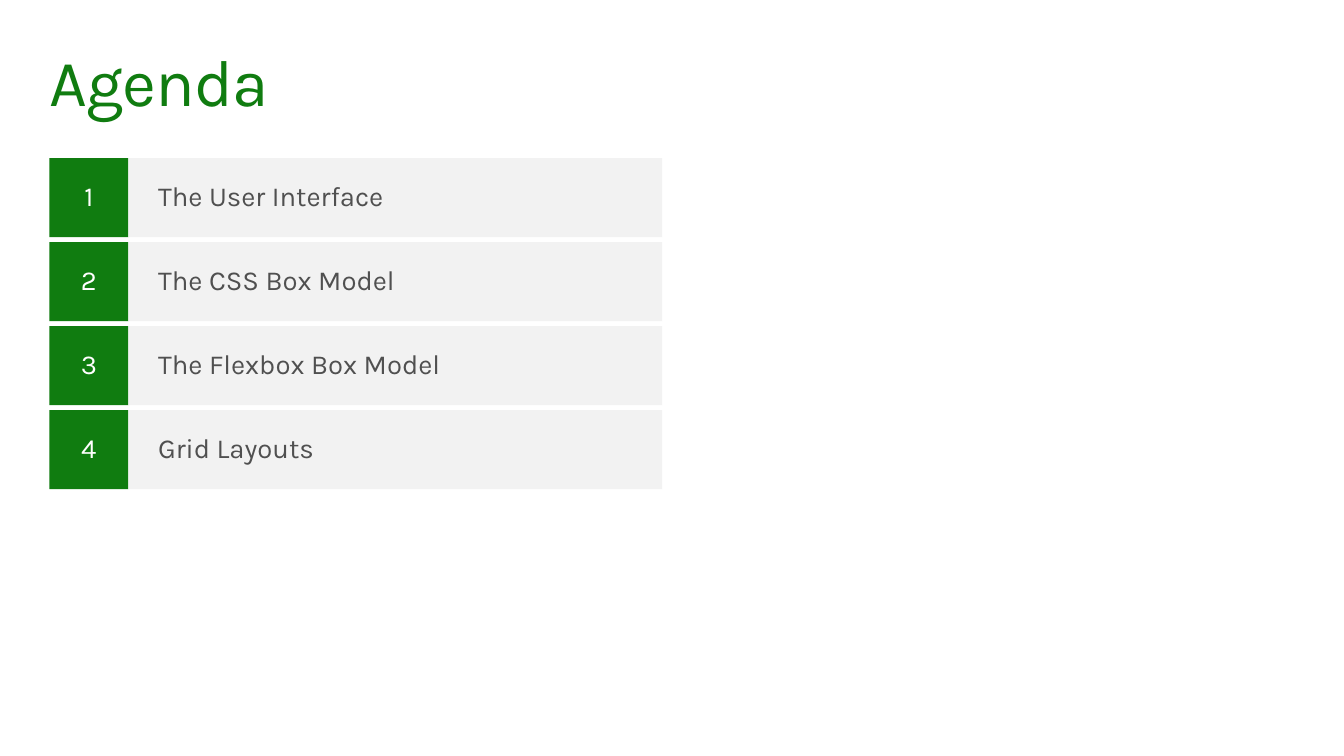
import pptx
import pptx.dml.color
import pptx.enum.shapes
import pptx.enum.text
import pptx.util
from pptx.util import Inches

GREEN = "107C10"
PALE_GREY = "F2F2F2"
DARK_GREY = "505050"
WHITE = "FFFFFF"

ALIGN = pptx.enum.text.PP_ALIGN
ANCHOR = pptx.enum.text.MSO_ANCHOR


def write_text(frame, text, size, color, align, anchor, margin_x, margin_y):
    """Fill a text frame with one formatted line and return its run."""
    frame.word_wrap = True
    frame.auto_size = pptx.enum.text.MSO_AUTO_SIZE.NONE
    frame.vertical_anchor = anchor
    frame.margin_left = frame.margin_right = Inches(margin_x)
    frame.margin_top = frame.margin_bottom = Inches(margin_y)
    paragraph = frame.paragraphs[0]
    paragraph.alignment = align
    paragraph.line_spacing = 0.9
    run = paragraph.add_run()
    run.text = text
    run.font.name = "Karla"
    run.font.size = pptx.util.Pt(size)
    run.font.color.rgb = pptx.dml.color.RGBColor.from_string(color)
    return run


def add_block(shapes, left, top, width, height, color):
    block = shapes.add_shape(
        pptx.enum.shapes.MSO_SHAPE.RECTANGLE,
        Inches(left), Inches(top), Inches(width), Inches(height),
    )
    block.shadow.inherit = False
    block.fill.solid()
    block.fill.fore_color.rgb = pptx.dml.color.RGBColor.from_string(color)
    block.line.fill.background()
    return block


presentation = pptx.Presentation()
presentation.slide_width = Inches(13.6)
presentation.slide_height = Inches(7.65)
title_only = presentation.slide_layouts[5]
slide = presentation.slides.add_slide(title_only)

heading = slide.shapes.title
heading.left, heading.top = Inches(0.4), Inches(0.4)
heading.width, heading.height = Inches(12.8), Inches(1)
heading_run = write_text(heading.text_frame, "Agenda", 48, GREEN,
                         ALIGN.LEFT, ANCHOR.TOP, 0.1, 0.1)
heading_run.font._element.set("spc", "-70")

topics = [
    "The User Interface",
    "The CSS Box Model",
    "The Flexbox Box Model",
    "Grid Layouts",
]
agenda_left, agenda_top = 0.5, 1.6
row_height, row_gap = 0.8, 0.05
number_width, topic_width = 0.8, 5.4

for index, topic in enumerate(topics):
    top = agenda_top + index * (row_height + row_gap)
    row = slide.shapes.add_group_shape()

    number_block = add_block(row.shapes, agenda_left, top,
                             number_width, row_height, GREEN)
    write_text(number_block.text_frame, str(index + 1), 20, WHITE,
               ALIGN.CENTER, ANCHOR.MIDDLE, 0.2, 0.16)

    topic_block = add_block(row.shapes, agenda_left + number_width, top,
                            topic_width, row_height, PALE_GREY)
    write_text(topic_block.text_frame, topic, 20, DARK_GREY,
               ALIGN.LEFT, ANCHOR.MIDDLE, 0.3, 0.1)

presentation.save("out.pptx")
